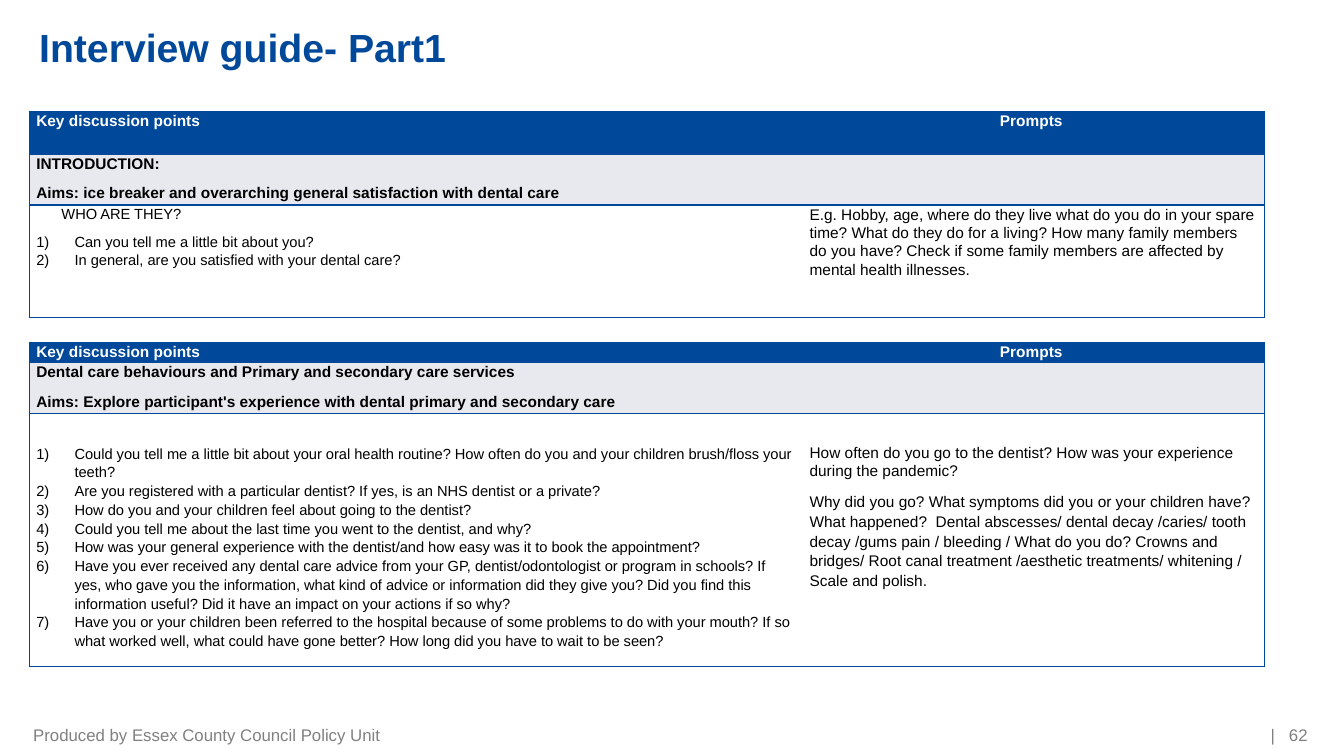
from lxml import etree
from pptx import Presentation, util as u
from pptx.dml.color import RGBColor
from pptx.enum import text as t
from pptx.oxml.ns import qn

BLUE = RGBColor(0x00, 0x48, 0x99)
PALE = RGBColor(0xE7, 0xE9, 0xEF)
WHITE = RGBColor(0xFF, 0xFF, 0xFF)
BLACK = RGBColor(0x00, 0x00, 0x00)
GREY = RGBColor(0x80, 0x80, 0x80)

TITLE = "Interview guide- Part1"
FOOTER = "Produced by Essex County Council Policy Unit"
PAGE = "|   62"
HEADINGS = ("Key discussion points", "Prompts ")

# Prompts are pairs of text and line spacing; lengths are in inches.
SECTIONS = [
    dict(
        top=1.11, rows=(0.42, 0.48, 1.12), body_inset=0, spacing=1.07,
        aims=["INTRODUCTION:",
              "Aims: ice breaker and overarching general satisfaction with dental care"],
        lead="WHO ARE THEY?",
        questions=["Can you tell me a little bit about you?",
                   "In general, are you satisfied with your dental care?"],
        prompts=[("E.g. Hobby, age, where do they live what do you do in your spare time? "
                  "What do they do for a living? How many family members do you have? "
                  "Check if some family members are affected by mental health illnesses.", 1.07)],
    ),
    dict(
        top=3.4, rows=(0.18, 0.48, 2.32), body_inset=0.3, spacing=1.15,
        aims=["Dental care behaviours and Primary and secondary care services",
              "Aims: Explore participant's experience with dental primary and secondary care"],
        lead=None,
        questions=[
            "Could you tell me a little bit about your oral health routine? "
            "How often do you and your children brush/floss your teeth?",
            "Are you registered with a particular dentist? If yes, is an NHS dentist or a private?",
            "How do you and your children feel about going to the dentist?",
            "Could you tell me about the last time you went to the dentist, and why?",
            "How was your general experience with the dentist/and how easy was it to book "
            "the appointment?",
            "Have you ever received any dental care advice from your GP, dentist/odontologist "
            "or program in schools? If yes, who gave you the information, what kind of advice "
            "or information did they give you? Did you find this information useful? "
            "Did it have an impact on your actions if so why?",
            "Have you or your children been referred to the hospital because of some problems "
            "to do with your mouth? If so what worked well, what could have gone better? "
            "How long did you have to wait to be seen?",
        ],
        prompts=[
            ("How often do you go to the dentist? How was your experience during the pandemic?",
             1.07),
            ("Why did you go? What symptoms did you or your children have? What happened?  "
             "Dental abscesses/ dental decay /caries/ tooth decay /gums pain / bleeding / "
             "What do you do? Crowns and bridges/ Root canal treatment /aesthetic treatments/ "
             "whitening / Scale and polish.", 1.15),
        ],
    ),
]

LEFT = 0.29
COLUMNS = (7.67, 4.58)
FOOTER_TOP, FOOTER_HEIGHT = 7.21, 0.15


def write(frame, content, size=11, color=BLACK, bold=False, align=t.PP_ALIGN.LEFT,
          spacing=1.07, after=8, indent=0, numbered=False):
    """Fill the frame's first paragraph if it is empty, otherwise add one."""
    para = frame.paragraphs[0] if not frame.text else frame.add_paragraph()
    para.alignment = align
    para.line_spacing = spacing
    para.space_after = u.Pt(after)
    props = para._p.get_or_add_pPr()
    props.set("marL", str(u.Inches(indent)))
    props.set("indent", str(u.Inches(-indent if numbered else 0)))
    if numbered:
        etree.SubElement(props, qn("a:buAutoNum"), type="arabicParenR")
    run = para.add_run()
    run.text = content
    font = run.font
    font.name, font.size, font.bold = "Arial", u.Pt(size), bold
    font.color.rgb = color


def add_text(slide, box, content, insets, anchor, **style):
    frame = slide.shapes.add_textbox(*map(u.Inches, box)).text_frame
    frame.word_wrap = True
    frame.vertical_anchor = anchor
    (frame.margin_left, frame.margin_top,
     frame.margin_right, frame.margin_bottom) = map(u.Inches, insets)
    write(frame, content, spacing=1, after=0, **style)


def format_cell(cell, fill, sides):
    """Fill the cell and draw blue borders on the sides named (L, R, T, B)."""
    cell.margin_left = cell.margin_right = u.Inches(0.07)
    cell.margin_top = cell.margin_bottom = 0
    props = cell._tc.get_or_add_tcPr()
    for side in "LRTB":
        line = etree.SubElement(props, qn(f"a:ln{side}"), w=str(u.Pt(1)))
        if side in sides:
            solid = etree.SubElement(line, qn("a:solidFill"))
            etree.SubElement(solid, qn("a:srgbClr"), val=str(BLUE))
        else:
            etree.SubElement(line, qn("a:noFill"))
    cell.fill.solid()
    cell.fill.fore_color.rgb = fill


def add_section(slide, section):
    rows = section["rows"]
    box = (LEFT, section["top"], sum(COLUMNS), sum(rows))
    table = slide.shapes.add_table(len(rows), len(COLUMNS), *map(u.Inches, box)).table
    table.first_row = table.horz_banding = False
    for column, width in zip(table.columns, COLUMNS):
        column.width = u.Inches(width)
    for row, height, fill in zip(table.rows, rows, (BLUE, PALE, WHITE)):
        row.height = u.Inches(height)
        for cell, sides in zip(row.cells, ("LTB", "RTB")):
            format_cell(cell, fill, sides)

    for col, align in enumerate((t.PP_ALIGN.LEFT, t.PP_ALIGN.CENTER)):
        write(table.cell(0, col).text_frame, HEADINGS[col], color=WHITE, bold=True, align=align)
        table.cell(2, col).margin_top = u.Inches(section["body_inset"])
    for aim in section["aims"]:
        write(table.cell(1, 0).text_frame, aim, bold=True)
    points, prompts = (table.cell(2, col).text_frame for col in range(2))
    if section["lead"]:
        write(points, section["lead"], size=10.5, indent=0.25)
    for question in section["questions"]:
        write(points, question, size=10.5, spacing=section["spacing"], after=0,
              indent=0.38, numbered=True)
    for prompt, spacing in section["prompts"]:
        write(prompts, prompt, spacing=spacing)


def main():
    deck = Presentation()
    deck.slide_width, deck.slide_height = u.Inches(13.33), u.Inches(7.5)
    slide = deck.slides.add_slide(deck.slide_layouts[6])
    add_text(slide, (LEFT, 0.11, 8.29, 0.59), TITLE, (0.1, 0.05, 0.1, 0),
             t.MSO_ANCHOR.BOTTOM, size=28, color=BLUE, bold=True)
    for section in SECTIONS:
        add_section(slide, section)
    add_text(slide, (12.12, FOOTER_TOP, 0.85, FOOTER_HEIGHT), PAGE, (0.1, 0.05, 0, 0.05),
             t.MSO_ANCHOR.MIDDLE, size=12, color=GREY, align=t.PP_ALIGN.RIGHT)
    add_text(slide, (0.33, FOOTER_TOP, 6.3, FOOTER_HEIGHT), FOOTER, (0, 0.05, 0.1, 0.05),
             t.MSO_ANCHOR.MIDDLE, size=12, color=GREY)
    deck.save("out.pptx")


if __name__ == "__main__":
    main()
